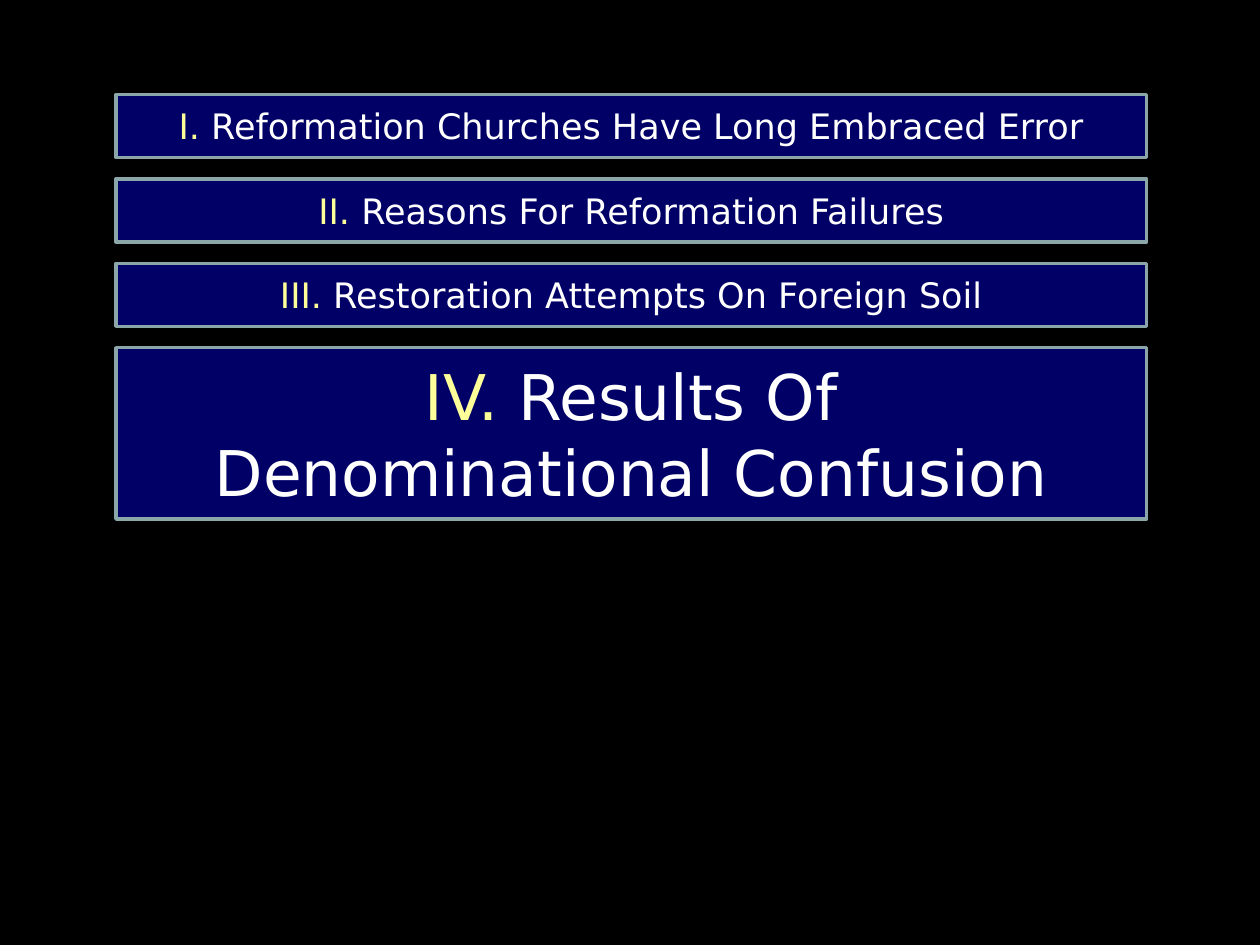
import pptx
import pptx.dml.color
import pptx.enum.shapes
import pptx.enum.text
import pptx.util
from pptx.util import Inches

FONT = "DejaVu Sans"
LEFT, TOP, WIDTH, GAP = 0.92, 0.75, 8.18, 0.17

# numeral, title lines, box height, text size
HEADINGS = [
    ("I.", ["Reformation Churches Have Long Embraced Error"], 0.5, 20),
    ("II.", ["Reasons For Reformation Failures"], 0.5, 20),
    ("III.", ["Restoration Attempts On Foreign Soil"], 0.5, 20),
    ("IV.", ["Results Of", "Denominational Confusion"], 1.36, 36),
]


def color(value):
    return pptx.dml.color.RGBColor.from_string(value)


def add_run(paragraph, text, size, text_color):
    run = paragraph.add_run()
    run.text = text
    run.font.name = FONT
    run.font.size = pptx.util.Pt(size)
    run.font.color.rgb = color(text_color)


def add_heading(slide, left, top, width, height, numeral, lines, size):
    # Framed box
    shape = slide.shapes.add_shape(
        pptx.enum.shapes.MSO_SHAPE.RECTANGLE, left, top, width, height)
    shape.shadow.inherit = False
    shape.fill.solid()
    shape.fill.fore_color.rgb = color("000066")
    shape.line.color.rgb = color("8AA6A8")
    shape.line.width = pptx.util.Pt(2)

    # Yellow numeral followed by the white title
    frame = shape.text_frame
    frame.word_wrap = True
    frame.vertical_anchor = pptx.enum.text.MSO_ANCHOR.MIDDLE
    paragraph = frame.paragraphs[0]
    paragraph.alignment = pptx.enum.text.PP_ALIGN.CENTER
    add_run(paragraph, numeral, size, "FFFF99")
    add_run(paragraph, " " + lines[0], size, "FFFFFF")
    for line in lines[1:]:
        paragraph.add_line_break()
        add_run(paragraph, line, size, "FFFFFF")


def add_outline(slide, left, top, width, gap):
    for numeral, lines, height, size in HEADINGS:
        add_heading(slide, left, top, width, Inches(height), numeral, lines, size)
        top += Inches(height) + gap


def main():
    presentation = pptx.Presentation()
    presentation.slide_width = Inches(10)
    presentation.slide_height = Inches(7.5)
    slide = presentation.slides.add_slide(presentation.slide_layouts[6])

    # Black background
    slide.background.fill.solid()
    slide.background.fill.fore_color.rgb = color("000000")

    add_outline(slide, Inches(LEFT), Inches(TOP), Inches(WIDTH), Inches(GAP))
    presentation.save("out.pptx")


if __name__ == "__main__":
    main()
